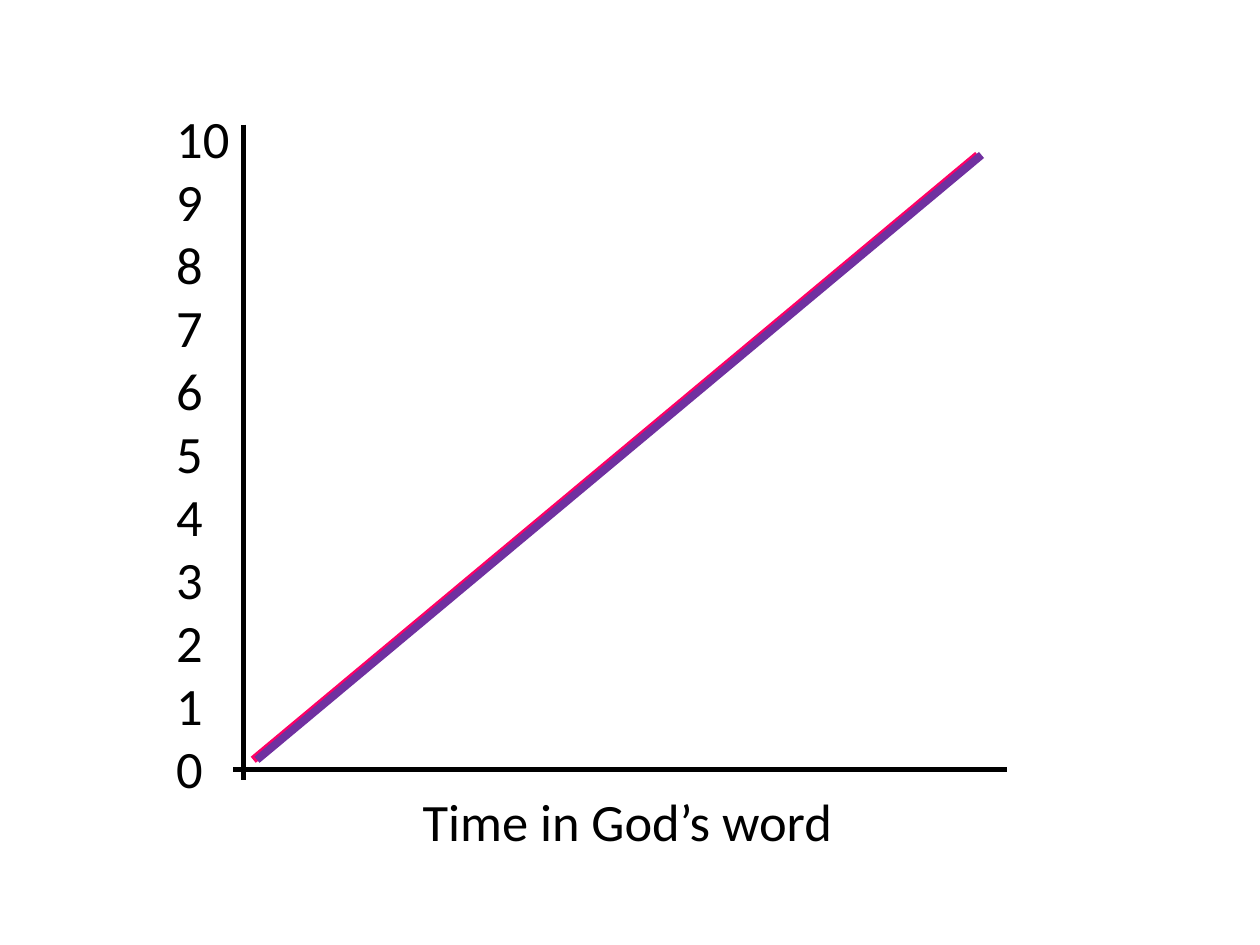
from typing import NamedTuple

from lxml import etree
from pptx import Presentation
from pptx.dml.color import RGBColor
from pptx.enum.shapes import MSO_CONNECTOR
from pptx.enum.text import MSO_AUTO_SIZE, PP_ALIGN
from pptx.oxml.ns import qn
from pptx.util import Inches, Pt

STRAIGHT = MSO_CONNECTOR.STRAIGHT
LEFT, CENTER = PP_ALIGN.LEFT, PP_ALIGN.CENTER
FIT_TEXT = MSO_AUTO_SIZE.SHAPE_TO_FIT_TEXT
COLUMNS, ROWS = 10, 7.5
BLACK, PINK, PURPLE = "000000", "FF0066", "7030A0"
TREND_START, TREND_RUN = 2.01, 5.75
TREND_BOTTOM, TREND_TOP = 6.03, 1.23
TREND_OFFSET = 0.03


class Stroke(NamedTuple):
    """A straight line between two grid points."""

    x1: float
    y1: float
    x2: float
    y2: float
    color: str
    width: float


def rgb(value: str) -> RGBColor:
    """Turn a hex string into a colour."""
    return RGBColor.from_string(value)


def trend(shift: float, color: str) -> Stroke:
    """Describe a rising line moved right by the given shift."""
    start = TREND_START + shift
    return Stroke(start, TREND_BOTTOM, start + TREND_RUN, TREND_TOP, color, 4.5)


def draw_stroke(slide, stroke: Stroke) -> None:
    """Draw one line without a shadow."""
    ends = [Inches(value) for value in stroke[:4]]
    connector = slide.shapes.add_connector(STRAIGHT, *ends)
    connector.line.color.rgb = rgb(stroke.color)
    connector.line.width = Pt(stroke.width)
    etree.SubElement(connector._element.spPr, qn("a:effectLst"))


def add_text(slide, lines: list[str], *, left: float, top: float, width: float,
             height: float, align=LEFT, size: float = 30, font: str = "Calibri",
             color: str = BLACK) -> None:
    """Place a text box with one paragraph for each line."""
    box = slide.shapes.add_textbox(*map(Inches, (left, top, width, height)))
    frame = box.text_frame
    frame.word_wrap = True
    frame.auto_size = FIT_TEXT
    frame.text = "\n".join(lines)
    for paragraph in frame.paragraphs:
        paragraph.alignment = align
        for run in paragraph.runs:
            run.font.name = font
            run.font.size = Pt(size)
            run.font.color.rgb = rgb(color)


def main() -> None:
    """Build the graph slide and save it."""
    deck = Presentation()
    deck.slide_width, deck.slide_height = Inches(COLUMNS), Inches(ROWS)
    slide = deck.slides.add_slide(deck.slide_layouts[6])
    add_text(slide, ["Time in God’s word"], left=1.81, top=6.21,
             width=6.34, height=0.61, align=CENTER)
    add_text(slide, [str(score) for score in range(10, -1, -1)],
             left=1.3, top=0.79, width=0.79, height=5.65)
    vertical_axis = Stroke(1.93, 0.99, 1.93, 6.19, BLACK, 3)
    horizontal_axis = Stroke(7.99, 6.11, 1.85, 6.11, BLACK, 3)
    for stroke in (vertical_axis, horizontal_axis,
                   trend(0, PINK), trend(TREND_OFFSET, PURPLE)):
        draw_stroke(slide, stroke)
    deck.save("out.pptx")


if __name__ == "__main__":
    main()
